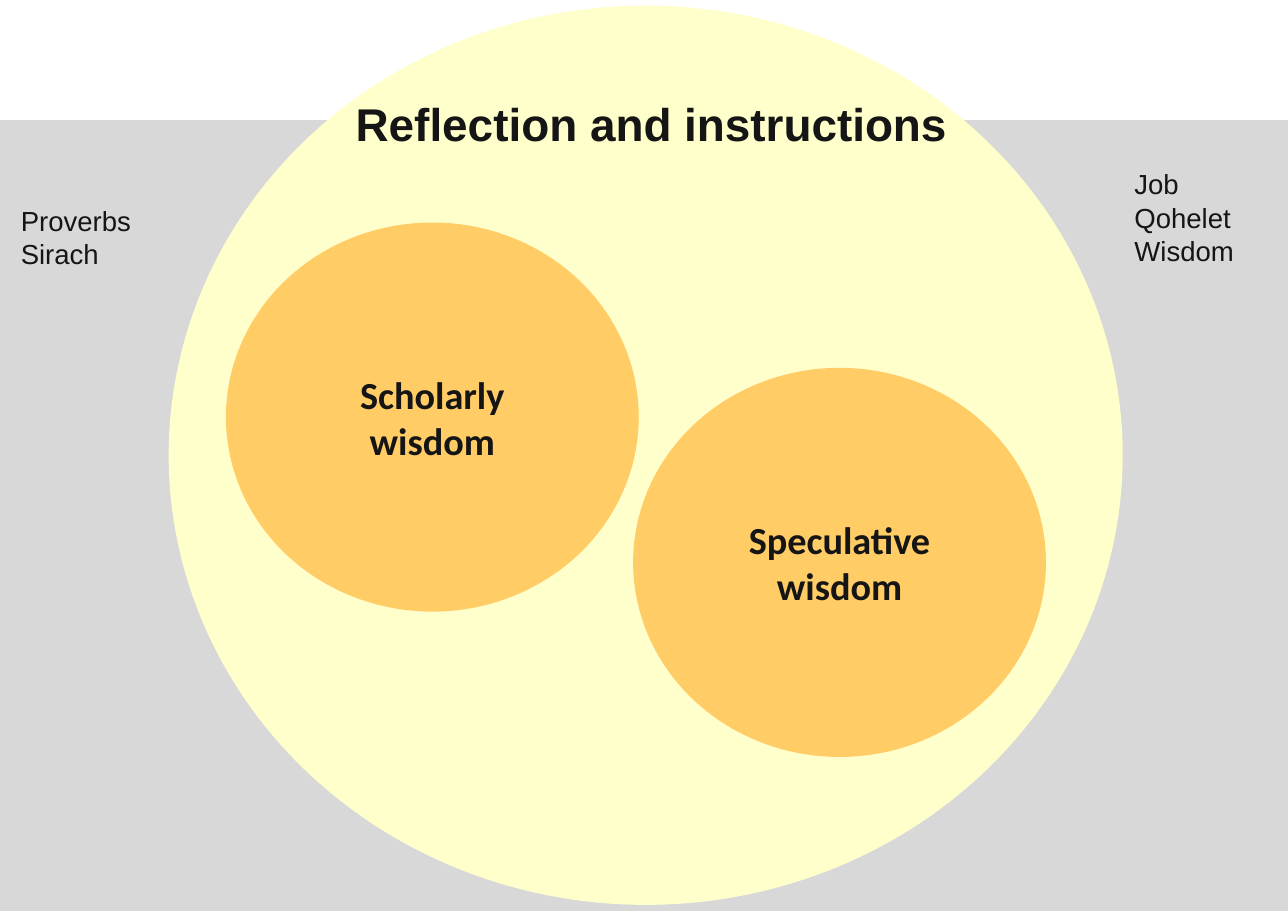
from pptx import Presentation
from pptx import util as u
from pptx.dml.color import RGBColor
from pptx.enum import shapes, text

GREY = RGBColor(0xD8, 0xD8, 0xD8)
CREAM = RGBColor(0xFF, 0xFF, 0xCC)
ORANGE = RGBColor(0xFF, 0xCC, 0x66)
INK = RGBColor(0x15, 0x15, 0x15)
WIDTH, HEIGHT = 29.7, 21


class WisdomSlide:
    def __init__(self, deck):
        self.slide = deck.slides.add_slide(deck.slide_layouts[5])

    def wording(self, frame, words, size, font, bold=False, centred=False):
        frame.text = words
        frame.margin_left = frame.margin_right = u.Cm(0.28)
        frame.margin_top = frame.margin_bottom = u.Cm(0.15)
        frame.word_wrap = centred
        frame.vertical_anchor = text.MSO_ANCHOR.MIDDLE if centred else text.MSO_ANCHOR.TOP
        if not centred:
            frame.auto_size = text.MSO_AUTO_SIZE.SHAPE_TO_FIT_TEXT
        for paragraph in frame.paragraphs:
            paragraph.alignment = text.PP_ALIGN.CENTER if centred else text.PP_ALIGN.LEFT
            for run in paragraph.runs:
                run.font.name = font
                run.font.size = u.Pt(size)
                run.font.bold = bold
                run.font.color.rgb = INK

    def area(self, kind, place, colour):
        area = self.slide.shapes.add_shape(kind, *map(u.Cm, place))
        area.shadow.inherit = False
        area.fill.solid()
        area.fill.fore_color.rgb = colour
        area.line.fill.background()
        return area

    def wisdom(self, left, top, words):
        circle = self.area(shapes.MSO_SHAPE.OVAL, (left, top, 9.52, 8.97), ORANGE)
        self.wording(circle.text_frame, words, 25, "Calibri", bold=True, centred=True)

    def books(self, place, names):
        box = self.slide.shapes.add_textbox(*map(u.Cm, place))
        self.wording(box.text_frame, "\n".join(names), 18, "Arial")

    def title(self, place, words):
        title = self.slide.shapes.title
        title.left, title.top, title.width, title.height = map(u.Cm, place)
        self.wording(title.text_frame, words, 30, "Arial", bold=True)
        self.slide.shapes[-1].element.addnext(title.element)


def main():
    deck = Presentation()
    deck.slide_width, deck.slide_height = u.Cm(WIDTH), u.Cm(HEIGHT)
    page = WisdomSlide(deck)
    horizon = 2.77
    page.area(shapes.MSO_SHAPE.RECTANGLE, (0, horizon, WIDTH, HEIGHT - horizon), GREY)
    page.area(shapes.MSO_SHAPE.OVAL, (3.89, 0.13, 22, 20.73), CREAM)
    page.wisdom(5.21, 5.13, "Scholarly wisdom")
    page.wisdom(14.6, 8.48, "Speculative wisdom")
    page.books((0.2, 4.55, 3.15, 1.83), ["Proverbs", "Sirach"])
    page.title((7.92, 2.06, 14.38, 1.57), "Reflection and instructions")
    page.books((25.88, 3.71, 2.9, 2.59), ["Job", "Qohelet", "Wisdom"])
    deck.save("out.pptx")


if __name__ == "__main__":
    main()
